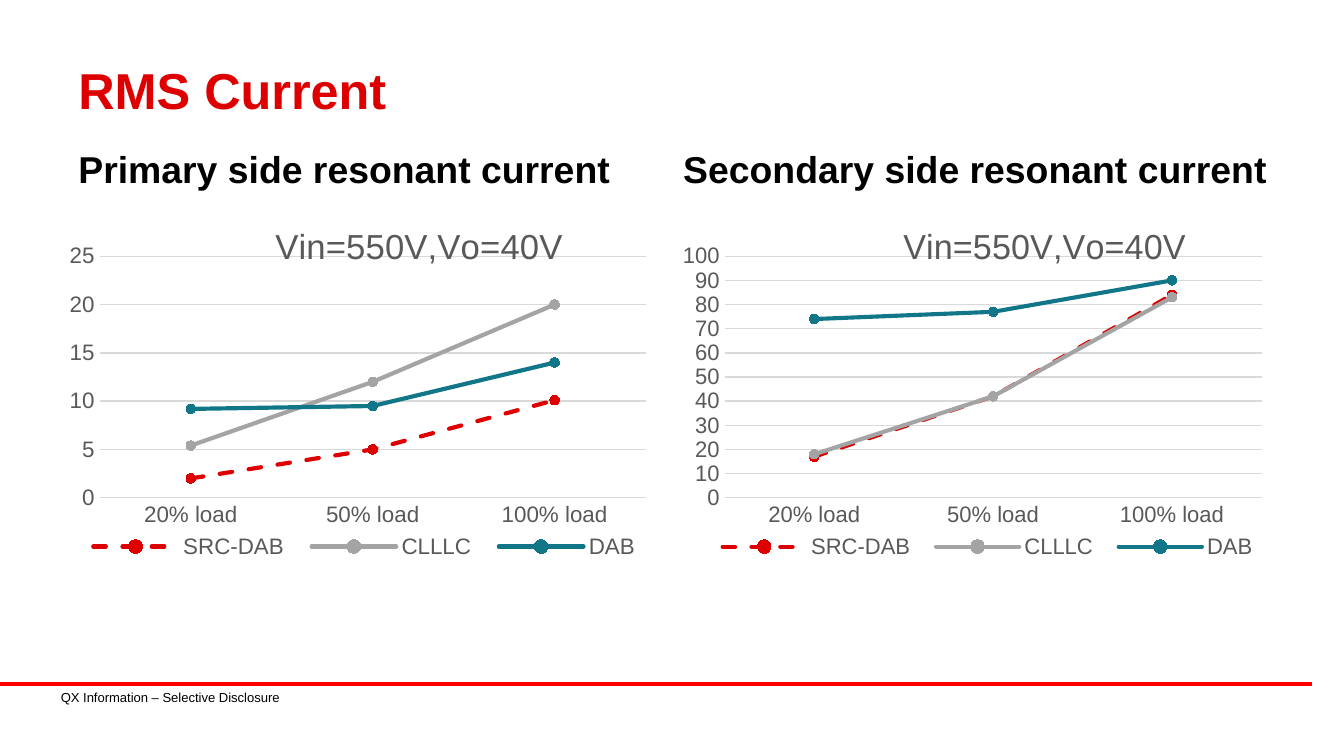
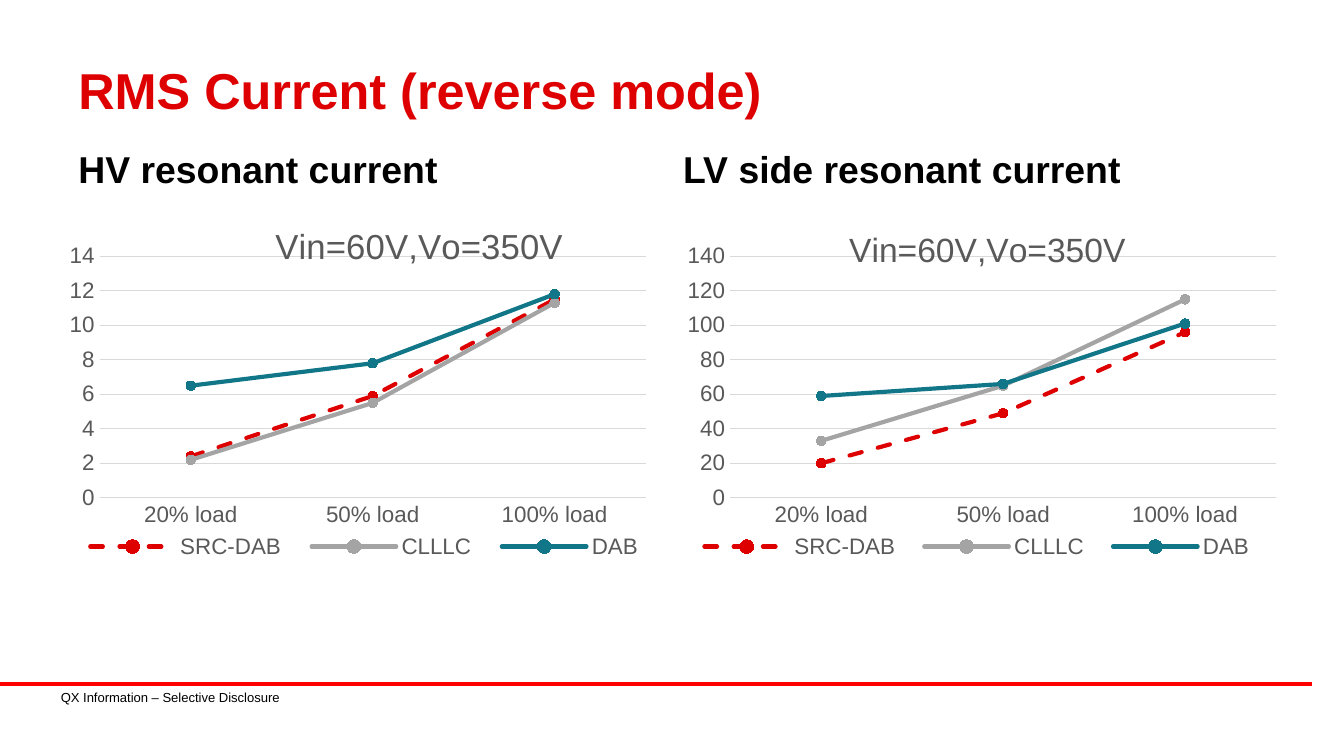
from dataclasses import dataclass

from lxml import etree
from pptx import Presentation
from pptx import util as u
from pptx.chart import data as chart_data
from pptx.dml import color
from pptx.enum import chart as chart_kinds, dml, shapes, text
from pptx.oxml import ns


@dataclass(frozen=True)
class Theme:
    font: str = "Arial"
    red: str = "DE0000"
    rule: str = "FF0000"
    black: str = "000000"
    label: str = "595959"
    grid: str = "D9D9D9"
    gray: str = "A4A4A4"
    teal: str = "117788"
    title_size: float = 27
    heading_size: float = 20
    label_size: float = 12
    footer_size: float = 7


THEME = Theme()
FOOTER = "QX Information – Selective Disclosure"
LOADS = ["20% load", "50% load", "100% load"]
CONVERTERS = [
    ("SRC-DAB", THEME.red, True),
    ("CLLLC", THEME.gray, False),
    ("DAB", THEME.teal, False),
]
PAGES = [
    {
        "title": "RMS Current",
        "panels": [
            {
                "heading": "Primary side resonant current",
                "condition": "Vin=550V,Vo=40V",
                "currents": [(2, 5, 10.1), (5.4, 12, 20), (9.2, 9.5, 14)],
                "scale": (25, 5),
                "condition_at": (0.34, 0.04), "condition_size": 18.6,
                "plot_left": 0.055, "legend_span": (0.01, 0.98),
            },
            {
                "heading": "Secondary side resonant current",
                "condition": "Vin=550V,Vo=40V",
                "currents": [(17, 42, 84), (18, 42, 83), (74, 77, 90)],
                "scale": (100, 10),
                "condition_at": (0.35, 0.04), "condition_size": 18.6,
                "plot_left": 0.055, "legend_span": (0.02, 0.97),
            },
        ],
    },
    {
        "title": "RMS Current (reverse mode)",
        "panels": [
            {
                "heading": "HV resonant current",
                "condition": "Vin=60V,Vo=350V",
                "currents": [(2.4, 5.9, 11.5), (2.2, 5.5, 11.3), (6.5, 7.8, 11.8)],
                "scale": (14, 2),
                "condition_at": (0.34, 0.04), "condition_size": 18.6,
                "plot_left": 0.055, "legend_span": (0, 1),
            },
            {
                "heading": "LV side resonant current",
                "condition": "Vin=60V,Vo=350V",
                "currents": [(20, 49, 96), (33, 65, 115), (59, 66, 101)],
                "scale": (140, 20),
                "condition_at": (0.27, 0.05), "condition_size": 18,
                "plot_left": 0.08, "legend_span": (0, 0.99),
            },
        ],
    },
]
HEADING_COLUMNS = [(36, 318), (360, 332)]
CHART_LEFTS = [36, 365.8]
CHART_TOP, CHART_WIDTH, CHART_HEIGHT = 105.8, 318.2, 256.3
FOOTER_TOP = 366.5


def rgb(value):
    return color.RGBColor.from_string(value)


def style_font(font, size, tint, bold=False):
    font.name = THEME.font
    font.size = u.Pt(size)
    font.bold = bold
    font.color.rgb = rgb(tint)


def style_line(line, tint, width):
    line.color.rgb = rgb(tint)
    line.width = u.Pt(width)


def add_label(page, frame, words, size, tint, bold=False,
              anchor=text.MSO_ANCHOR.TOP, spacing=None):
    box = page.shapes.add_textbox(*map(u.Pt, frame))
    body = box.text_frame
    body.word_wrap = True
    body.vertical_anchor = anchor
    body.margin_left = body.margin_right = u.Pt(6)
    body.margin_top = body.margin_bottom = u.Pt(3)
    para = body.paragraphs[0]
    if spacing:
        para.line_spacing = spacing
    span = para.add_run()
    span.text = words
    style_font(span.font, size, tint, bold)


def add_footer(page):
    rule = page.shapes.add_connector(
        shapes.MSO_CONNECTOR.STRAIGHT,
        u.Pt(0), u.Pt(FOOTER_TOP), u.Pt(703), u.Pt(FOOTER_TOP))
    style_line(rule.line, THEME.rule, 2.25)
    properties = rule.element.find(ns.qn("p:spPr"))
    etree.SubElement(properties, ns.qn("a:effectLst"))
    add_label(page, (26.6, FOOTER_TOP, 166, 14.4), FOOTER,
              THEME.footer_size, THEME.black)


def set_layout(parent, index, inner=False, **place):
    previous = parent.find(ns.qn("c:layout"))
    if previous is not None:
        parent.remove(previous)
    layout = etree.Element(ns.qn("c:layout"))
    manual = etree.SubElement(layout, ns.qn("c:manualLayout"))
    settings = {"layoutTarget": "inner"} if inner else {}
    settings.update(xMode="edge", yMode="edge", **place)
    for name, value in settings.items():
        etree.SubElement(manual, ns.qn("c:" + name)).set("val", str(value))
    parent.insert(index, layout)


def style_axes(chart, scale):
    for axis in (chart.category_axis, chart.value_axis):
        axis.major_tick_mark = axis.minor_tick_mark = chart_kinds.XL_TICK_MARK.NONE
        style_font(axis.tick_labels.font, THEME.label_size, THEME.label)
    style_line(chart.category_axis.format.line, THEME.grid, 0.75)
    values = chart.value_axis
    values.minimum_scale = 0
    values.maximum_scale, values.major_unit = scale
    values.format.line.fill.background()
    values.has_major_gridlines = True
    style_line(values.major_gridlines.format.line, THEME.grid, 0.75)


def style_series(chart):
    plot = chart.plots[0]
    plot.vary_by_categories = False
    for series, (name, tint, dashed) in zip(plot.series, CONVERTERS):
        series.smooth = False
        style_line(series.format.line, tint, 2.25)
        if dashed:
            series.format.line.dash_style = dml.MSO_LINE.DASH
        marker = series.marker
        marker.style = chart_kinds.XL_MARKER_STYLE.CIRCLE
        marker.size = 5
        marker.format.fill.solid()
        marker.format.fill.fore_color.rgb = rgb(tint)
        style_line(marker.format.line, tint, 0.75)
    for entry in chart.element.iter(ns.qn("c:ser")):
        entry.find(ns.qn("c:spPr")).find(ns.qn("a:ln")).set("cap", "rnd")


def add_current_chart(page, left, panel):
    data = chart_data.CategoryChartData()
    data.categories = LOADS
    for (name, tint, dashed), currents in zip(CONVERTERS, panel["currents"]):
        data.add_series(name, currents)
    frame = map(u.Pt, (left, CHART_TOP, CHART_WIDTH, CHART_HEIGHT))
    chart = page.shapes.add_chart(
        chart_kinds.XL_CHART_TYPE.LINE_MARKERS, *frame, data).chart
    style_font(chart.font, 10, THEME.black)
    chart.has_title = True
    span = chart.chart_title.text_frame.paragraphs[0].add_run()
    span.text = panel["condition"]
    style_font(span.font, panel["condition_size"], THEME.label)
    chart.has_legend = True
    chart.legend.position = chart_kinds.XL_LEGEND_POSITION.BOTTOM
    chart.legend.include_in_layout = False
    style_font(chart.legend.font, THEME.label_size, THEME.label)
    style_axes(chart, panel["scale"])
    style_series(chart)
    root = chart.element.find(ns.qn("c:chart"))
    title_x, title_y = panel["condition_at"]
    legend_x, legend_width = panel["legend_span"]
    set_layout(root.find(ns.qn("c:title")), 1, x=title_x, y=title_y)
    set_layout(root.find(ns.qn("c:plotArea")), 0, inner=True,
               x=panel["plot_left"], y=0.123, w=0.919, h=0.505)
    set_layout(root.find(ns.qn("c:legend")), 1,
               x=legend_x, y=0.69, w=legend_width, h=0.08)


def main():
    deck = Presentation()
    deck.slide_width, deck.slide_height = u.Pt(720), u.Pt(405)
    for content in PAGES:
        page = deck.slides.add_slide(deck.slide_layouts[6])
        add_footer(page)
        add_label(page, (36, 16.6, 648, 67.7), content["title"],
                  THEME.title_size, THEME.red, True,
                  text.MSO_ANCHOR.MIDDLE, 0.85)
        for (left, width), chart_left, panel in zip(
                HEADING_COLUMNS, CHART_LEFTS, content["panels"]):
            add_label(page, (left, 67.7, width, 37.4), panel["heading"],
                      THEME.heading_size, THEME.black, True,
                      text.MSO_ANCHOR.BOTTOM)
            add_current_chart(page, chart_left, panel)
    deck.save("out.pptx")


if __name__ == "__main__":
    main()
